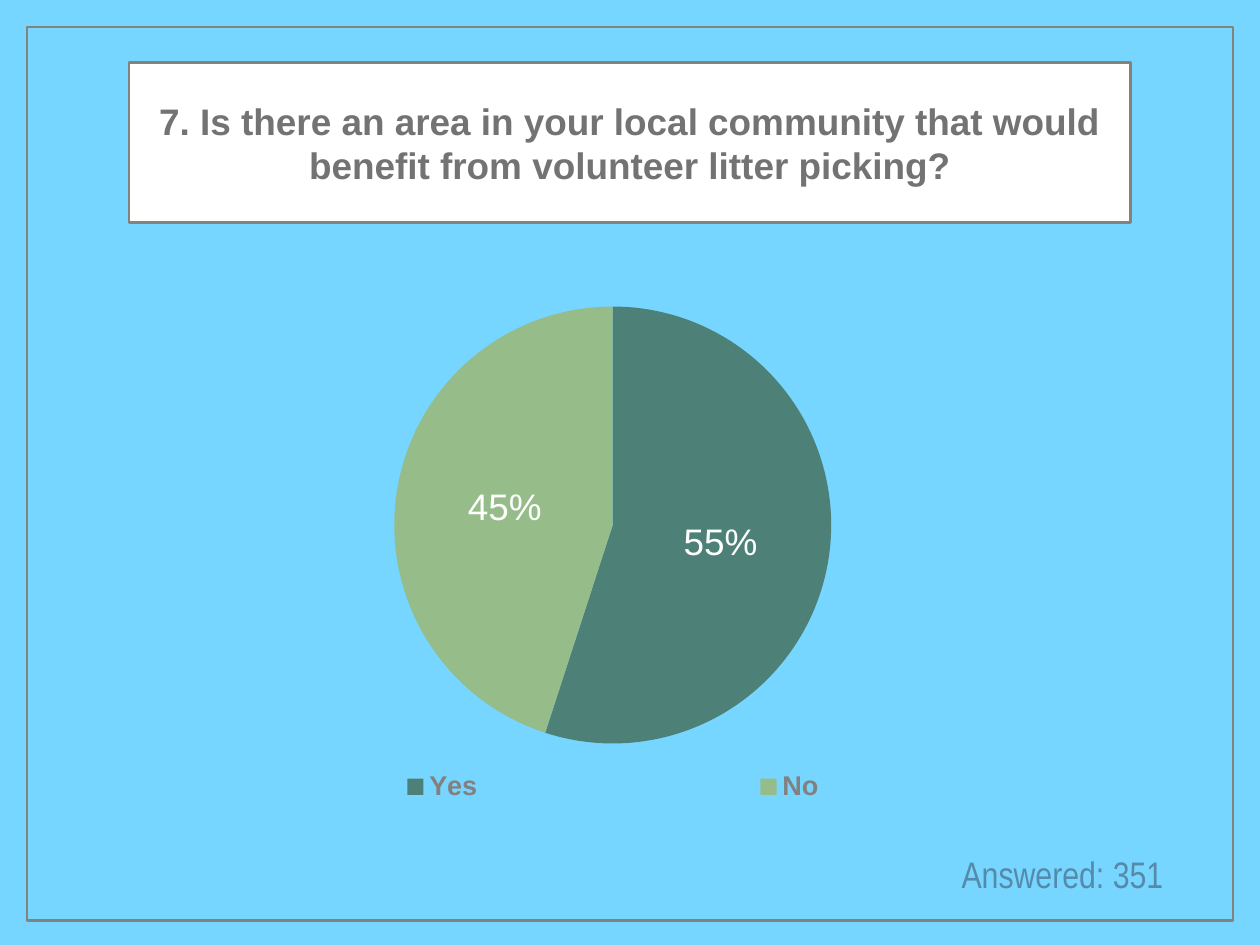
from lxml import etree
from pptx import Presentation
from pptx.chart.data import CategoryChartData
from pptx.dml.color import RGBColor
from pptx.enum.chart import XL_CHART_TYPE as ChartType
from pptx.enum.chart import XL_LABEL_POSITION as LabelPosition
from pptx.enum.chart import XL_LEGEND_POSITION as LegendPosition
from pptx.enum.shapes import MSO_SHAPE as Shape
from pptx.enum.text import MSO_ANCHOR as Anchor
from pptx.enum.text import PP_ALIGN as Align
from pptx.oxml import parse_xml
from pptx.oxml.ns import nsdecls, qn
from pptx.util import Pt

SKY = RGBColor(0x76, 0xD6, 0xFF)
WHITE = RGBColor(0xFF, 0xFF, 0xFF)
BORDER = RGBColor(0x83, 0x82, 0x7D)
TITLE_GREY = RGBColor(0x73, 0x73, 0x73)
LEGEND_GREY = RGBColor(0x81, 0x81, 0x81)
BLUE = RGBColor(0x55, 0x8A, 0xAB)
TEAL = RGBColor(0x4D, 0x81, 0x78)
GREEN = RGBColor(0x95, 0xBC, 0x89)

ANSWERS = {"Yes": (55, TEAL), "No": (45, GREEN)}


def style_font(font, name, size, color, bold=False):
    font.name = name
    font.size = Pt(size)
    font.bold = bold
    font.color.rgb = color


def add_frame(page, left, top, width, height, fill=None):
    frame = page.shapes.add_shape(
        Shape.RECTANGLE, Pt(left), Pt(top), Pt(width), Pt(height))
    frame.shadow.inherit = False
    if fill is None:
        frame.fill.background()
    else:
        frame.fill.solid()
        frame.fill.fore_color.rgb = fill
    frame.line.color.rgb = BORDER
    frame.line.width = Pt(2)
    return frame


def write_text(box, text, font_name, color, bold=False):
    text_frame = box.text_frame
    text_frame.word_wrap = True
    text_frame.vertical_anchor = Anchor.MIDDLE
    text_frame.margin_left = text_frame.margin_right = Pt(4)
    text_frame.margin_top = text_frame.margin_bottom = Pt(4)
    text_frame.text = text
    para = text_frame.paragraphs[0]
    para.alignment = Align.CENTER
    style_font(para.runs[0].font, font_name, 30, color, bold)


def place(element, x, y, width, height, inner=False):
    """Position a chart part by fractions of the chart area."""
    target = '<c:layoutTarget val="inner"/>' if inner else ""
    layout = parse_xml(
        f'<c:layout {nsdecls("c")}><c:manualLayout>{target}'
        '<c:xMode val="edge"/><c:yMode val="edge"/>'
        f'<c:x val="{x}"/><c:y val="{y}"/>'
        f'<c:w val="{width}"/><c:h val="{height}"/>'
        '</c:manualLayout></c:layout>')
    for old in element.findall(qn("c:layout")):
        element.remove(old)
    position = element.find(qn("c:legendPos"))
    if position is None:
        element.insert(0, layout)
    else:
        position.addnext(layout)


def add_answer_pie(page, left, top, width, height):
    data = CategoryChartData()
    data.categories = list(ANSWERS)
    data.add_series("Series 1", [value for value, _ in ANSWERS.values()])
    chart = page.shapes.add_chart(
        ChartType.PIE, Pt(left), Pt(top), Pt(width), Pt(height), data).chart
    chart.has_title = False
    style_font(chart.font, "Arial", 10, BLUE)

    # Slices
    plot = chart.plots[0]
    plot.vary_by_categories = False
    for index, (_, color) in enumerate(ANSWERS.values()):
        fill = plot.series[0].points[index].format.fill
        fill.solid()
        fill.fore_color.rgb = color
    plot_area = chart.element.find(".//" + qn("c:plotArea"))
    place(plot_area, 0.27, 0.01, 0.46, 0.86, inner=True)

    # Percentages
    plot.has_data_labels = True
    labels = plot.data_labels
    labels.show_percentage = True
    labels.show_value = False
    labels.number_format = "#,##0%"
    labels.number_format_is_linked = False
    labels.position = LabelPosition.CENTER
    style_font(labels.font, "Arial", 30, WHITE)

    # Legend across the full chart width
    chart.has_legend = True
    legend = chart.legend
    legend.position = LegendPosition.BOTTOM
    legend.include_in_layout = True
    style_font(legend.font, "Arial", 22, LEGEND_GREY, bold=True)
    place(legend._element, 0, 0.91, 1, 0.09)


def main():
    deck = Presentation()
    deck.slide_width, deck.slide_height = Pt(1024), Pt(768)
    page = deck.slides.add_slide(deck.slide_layouts[6])
    page.background.fill.solid()
    page.background.fill.fore_color.rgb = SKY

    # Border and question
    add_frame(page, 22, 22, 980, 726)
    question = add_frame(page, 105, 51, 814, 130, WHITE)
    write_text(question, "7. Is there an area in your local community that "
               "would benefit from volunteer litter picking?",
               "Arial", TITLE_GREY, bold=True)

    # Answers
    add_answer_pie(page, 108, 245, 780, 413)

    # Number of respondents
    answered = page.shapes.add_textbox(Pt(737), Pt(688), Pt(253), Pt(44))
    write_text(answered, "Answered: 351", "Arial Narrow", BLUE)

    deck.save("out.pptx")


if __name__ == "__main__":
    main()
